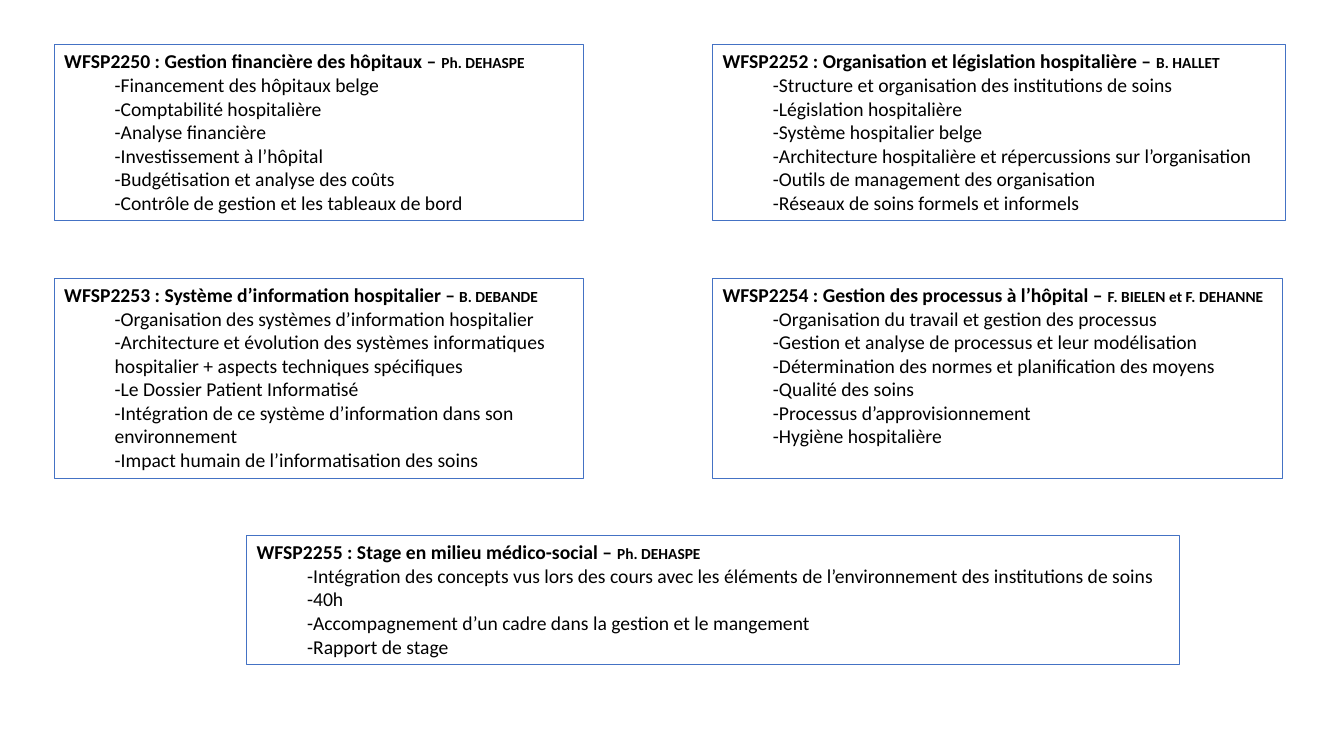
from pptx import Presentation
from pptx.dml.color import RGBColor
from pptx.enum.text import MSO_ANCHOR
from pptx.util import Cm, Pt

COLORS = {"text": "000000", "border": "4472C4"}
LEFT, RIGHT = 1.37, 17.96
TOP, MIDDLE, BOTTOM = 1.12, 7.01, 13.49

COURSES = [
    ((LEFT, TOP, 13.34, 4.45),
     "WFSP2250 : Gestion financière des hôpitaux – ", "Ph. DEHASPE",
     ["Financement des hôpitaux belge",
      "Comptabilité hospitalière",
      "Analyse financière",
      "Investissement à l’hôpital",
      "Budgétisation et analyse des coûts",
      "Contrôle de gestion et les tableaux de bord"]),
    ((RIGHT, TOP, 14.43, 4.45),
     "WFSP2252 : Organisation et législation hospitalière – ", "B. HALLET",
     ["Structure et organisation des institutions de soins",
      "Législation hospitalière",
      "Système hospitalier belge",
      "Architecture hospitalière et répercussions sur l’organisation",
      "Outils de management des organisation",
      "Réseaux de soins formels et informels"]),
    ((LEFT, MIDDLE, 13.34, 5.05),
     "WFSP2253 : Système d’information hospitalier –", " B. DEBANDE",
     ["Organisation des systèmes d’information hospitalier",
      "Architecture et évolution des systèmes informatiques hospitalier"
      " + aspects techniques spécifiques",
      "Le Dossier Patient Informatisé",
      "Intégration de ce système d’information dans son environnement",
      "Impact humain de l’informatisation des soins"]),
    ((RIGHT, MIDDLE, 14.35, 5.05),
     "WFSP2254 : Gestion des processus à l’hôpital – ", "F. BIELEN et F. DEHANNE",
     ["Organisation du travail et gestion des processus",
      "Gestion et analyse de processus et leur modélisation",
      "Détermination des normes et planification des moyens",
      "Qualité des soins",
      "Processus d’approvisionnement",
      "Hygiène hospitalière"]),
    ((6.22, BOTTOM, 23.5, 3.25),
     "WFSP2255 : Stage en milieu médico-social – ", "Ph. DEHASPE",
     ["Intégration des concepts vus lors des cours avec les éléments"
      " de l’environnement des institutions de soins",
      "40h",
      "Accompagnement d’un cadre dans la gestion et le mangement",
      "Rapport de stage"]),
]


class Deck:
    """Holds the style and the current slide."""

    font = "Calibri"
    size, small = 14, 11

    def __init__(self):
        self.prs = Presentation()
        self.prs.slide_width, self.prs.slide_height = Cm(33.87), Cm(19.05)
        self.s = self.prs.slides.add_slide(self.prs.slide_layouts[6])

    def run(self, p, text, size, bold=False):
        r = p.add_run()
        r.text = text
        r.font.name, r.font.size, r.font.bold = self.font, Pt(size), bold
        r.font.color.rgb = RGBColor.from_string(COLORS["text"])

    def item(self, tf, text):
        p = tf.add_paragraph()
        p.level = 1
        pPr = p._p.get_or_add_pPr()
        pPr.set("marL", str(Cm(1.27)))
        pPr.set("indent", "0")
        self.run(p, "-" + text, self.size)

    def course(self, box, title, teacher, topics):
        sp = self.s.shapes.add_textbox(*map(Cm, box))
        sp.line.color.rgb = RGBColor.from_string(COLORS["border"])
        sp.line.width = Pt(0.75)
        tf = sp.text_frame
        tf.word_wrap = True
        tf.vertical_anchor = MSO_ANCHOR.TOP
        p = tf.paragraphs[0]
        self.run(p, title, self.size, True)
        self.run(p, teacher, self.small, True)
        for topic in topics:
            self.item(tf, topic)


def main():
    deck = Deck()
    for course in COURSES:
        deck.course(*course)
    deck.prs.save("out.pptx")


if __name__ == "__main__":
    main()
